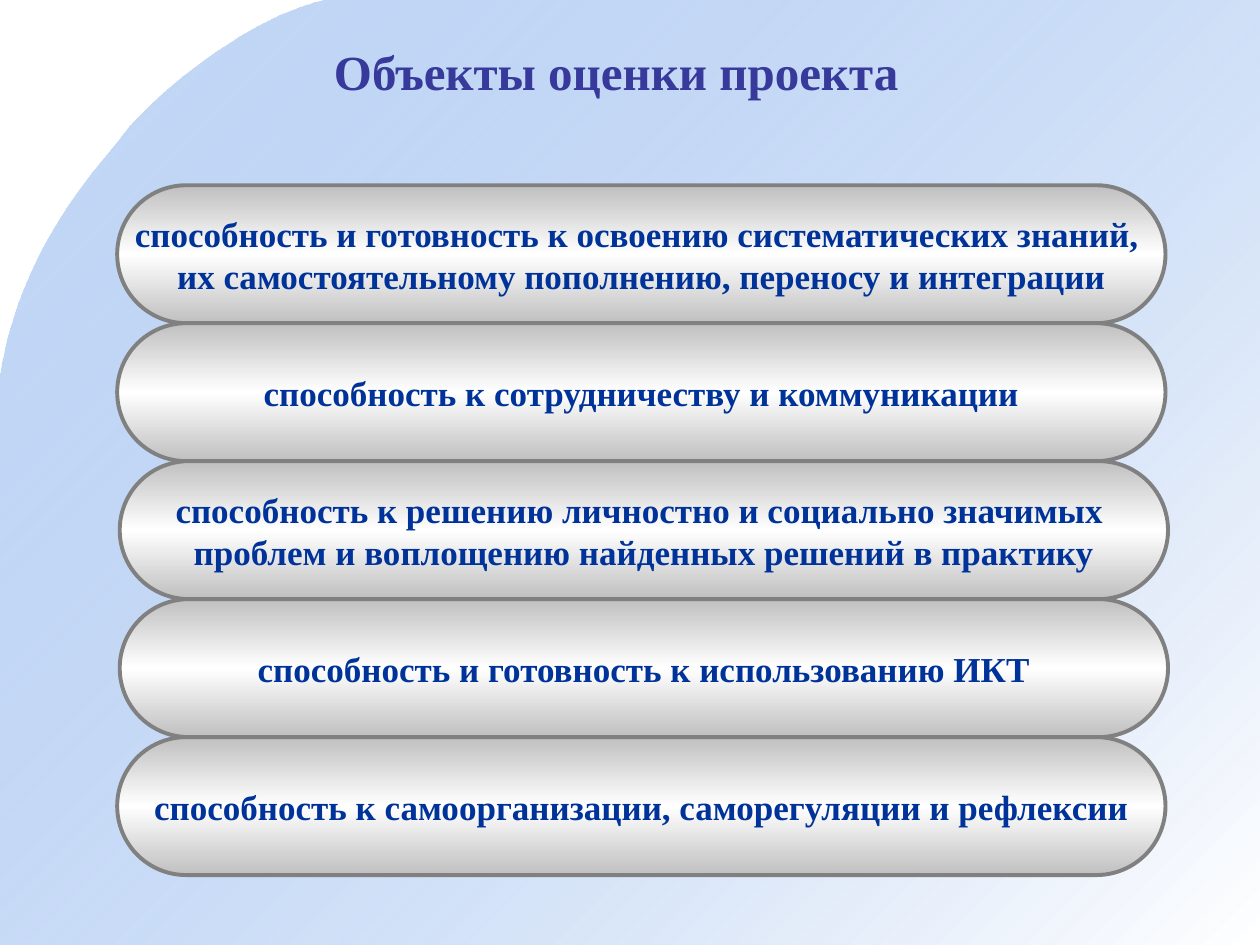
"""Build the slide listing the objects of project assessment."""
from lxml.etree import SubElement
from pptx import Presentation
from pptx.dml.color import RGBColor as RGB
from pptx.enum.shapes import MSO_SHAPE as SHAPE
from pptx.enum.text import MSO_ANCHOR as ANCHOR, PP_ALIGN as ALIGN
from pptx.oxml.ns import qn
from pptx.util import Inches, Pt

COLORS = {"sky": "699DE9", "white": "FFFFFF", "silver": "C0C0C0",
          "edge": "808080", "title": "37399B", "text": "003399"}
WIDTH, HEIGHT = 10, 7.5
LEFT, TOP, PILL_W, ROW = 0.93, 1.47, 8.32, 1.095


def write(sp, lines, size, color, wrap=True, font="Times New Roman"):
    tf = sp.text_frame
    tf.word_wrap = wrap
    tf.vertical_anchor = ANCHOR.MIDDLE
    for i, line in enumerate(lines):
        p = tf.add_paragraph() if i else tf.paragraphs[0]
        p.alignment = ALIGN.CENTER
        r = p.add_run()
        r.text = line
        r.font.name, r.font.size, r.font.bold = font, Pt(size), True
        r.font.color.rgb = RGB.from_string(COLORS[color])


def shade(sp, stops, angle):
    sp.shadow.inherit = False
    sp.fill.gradient()
    sp.fill.gradient_angle = 360 - angle
    gs_list = sp._element.spPr.find(qn("a:gradFill")).find(qn("a:gsLst"))
    for gs in list(gs_list):
        gs_list.remove(gs)
    for pos, color, alpha in stops:
        gs = SubElement(gs_list, qn("a:gs"), pos=str(pos * 1000))
        clr = SubElement(gs, qn("a:srgbClr"), val=COLORS[color])
        if alpha < 100:
            SubElement(clr, qn("a:alpha"), val=str(alpha * 1000))


prs = Presentation()
prs.slide_width, prs.slide_height = Inches(WIDTH), Inches(HEIGHT)
s = prs.slides.add_slide(prs.slide_layouts[6])

curves = [[(2.58, 0), (1.9, 0.16), (1.16, 0.83), (0.98, 1.07)],
          [(0.98, 1.07), (0.8, 1.32), (0.16, 1.94), (0, 3.01)]]
steps = 24
points = []
for a, b, c, d in curves:
    for t in (n / steps for n in range(1, steps + 1)):
        u = 1 - t
        points.append([u**3 * a[k] + 3 * u * u * t * b[k]
                       + 3 * u * t * t * c[k] + t**3 * d[k] for k in (0, 1)])
points += [(0, HEIGHT), (WIDTH, HEIGHT), (WIDTH, 0)]
fb = s.shapes.build_freeform(Inches(2.58), 0, scale=1.0)
fb.add_line_segments([(Inches(x), Inches(y)) for x, y in points], close=True)
backdrop = fb.convert_to_shape()
shade(backdrop, [(0, "sky", 39), (100, "white", 100)], 45)
backdrop.line.fill.background()

title = s.shapes.add_textbox(Inches(0.28), Inches(0.25), Inches(9.22), Inches(0.62))
write(title, ["Объекты оценки проекта"], 28, "title")

abilities = [
    (0, ["способность и готовность к освоению систематических знаний, ",
         "их самостоятельному пополнению, переносу и интеграции"]),
    (0, ["способность к сотрудничеству и коммуникации"]),
    (0.02, ["способность к решению личностно и социально значимых ",
            "проблем и воплощению найденных решений в практику"]),
    (0.02, ["способность и готовность к использованию ИКТ"]),
    (0, ["способность к самоорганизации, саморегуляции и рефлексии"]),
]
for row, (shift, lines) in enumerate(abilities):
    sp = s.shapes.add_shape(SHAPE.ROUNDED_RECTANGLE, Inches(LEFT + shift),
                            Inches(TOP + row * ROW), Inches(PILL_W), Inches(ROW))
    sp.adjustments[0] = 0.5
    shade(sp, [(0, "silver", 100), (50, "white", 100), (100, "silver", 100)], 90)
    sp.line.color.rgb = RGB.from_string(COLORS["edge"])
    sp.line.width = Pt(2.25)
    write(sp, lines, 20, "text", wrap=False)

prs.save("out.pptx")
